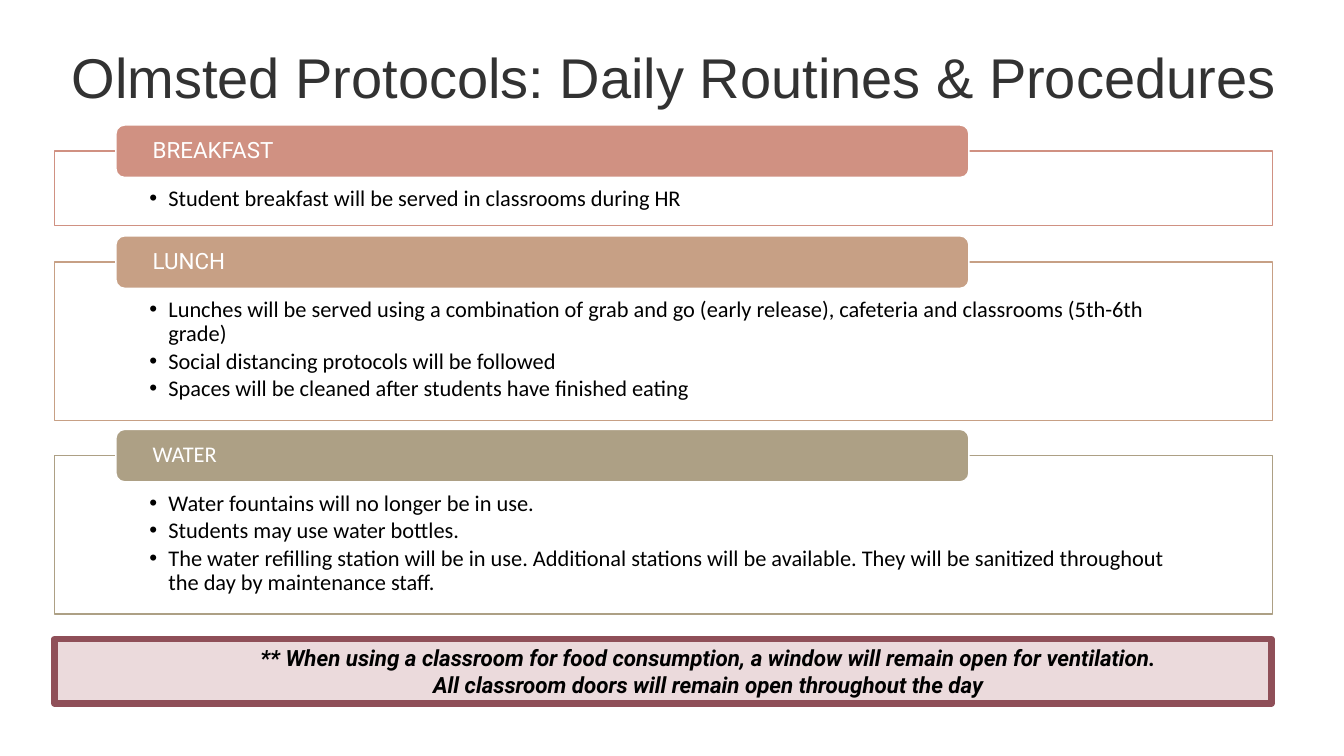
from lxml import etree
from pptx import Presentation
from pptx.dml.color import RGBColor
from pptx.enum.shapes import MSO_SHAPE
from pptx.enum.text import MSO_ANCHOR, MSO_AUTO_SIZE, PP_ALIGN
from pptx.oxml.ns import qn
from pptx.util import Inches, Pt

RECT, ROUNDED = MSO_SHAPE.RECTANGLE, MSO_SHAPE.ROUNDED_RECTANGLE
TOP, MIDDLE = MSO_ANCHOR.TOP, MSO_ANCHOR.MIDDLE
LEFT, CENTER = PP_ALIGN.LEFT, PP_ALIGN.CENTER
NO_AUTOFIT = MSO_AUTO_SIZE.NONE
TITLE_ONLY = 5

SECTIONS = [
    ("BREAKFAST", "Roboto", "D09182", 1.5, 0.74, [
        "Student breakfast will be served in classrooms during HR"]),
    ("LUNCH", "Roboto", "C7A085", 2.6, 1.57, [
        "Lunches will be served using a combination of grab and go "
        "(early release), cafeteria and classrooms (5th-6th grade)",
        "Social distancing protocols will be followed",
        "Spaces will be cleaned after students have finished eating"]),
    ("WATER", "Calibri", "ADA085", 4.52, 1.57, [
        "Water fountains will no longer be in use.",
        "Students may use water bottles.",
        "The water refilling station will be in use. Additional stations will be "
        "available. They will be sanitized throughout the day by maintenance staff."]),
]
NOTICE = [
    "** When using a classroom for food consumption, a window will remain open for ventilation.",
    "All classroom doors will remain open throughout the day",
]


def rgb(value):
    """Turn a hex string into a colour."""
    return RGBColor.from_string(value)


def add_bullet(p):
    """Give a paragraph a hanging round bullet."""
    pPr = p._p.get_or_add_pPr()
    pPr.set("marL", str(Inches(0.19)))
    pPr.set("indent", str(Inches(-0.19)))
    etree.SubElement(pPr, qn("a:buFont")).set("typeface", "Arial")
    etree.SubElement(pPr, qn("a:buChar")).set("char", "•")


def write(s, lines, font="Calibri", size=16, color="000000", bold=False, italic=False,
          align=LEFT, anchor=TOP, margins=(0.1, 0.05, 0.1, 0.05), spacing=1.0,
          after=0, bullets=False):
    """Write paragraphs into a shape with one format."""
    tf = s.text_frame
    tf.word_wrap = True
    tf.auto_size = NO_AUTOFIT
    tf.vertical_anchor = anchor
    (tf.margin_left, tf.margin_top,
     tf.margin_right, tf.margin_bottom) = map(Inches, margins)
    for i, line in enumerate(lines):
        p = tf.add_paragraph() if i else tf.paragraphs[0]
        p.alignment = align
        p.line_spacing = spacing
        p.space_after = Pt(after)
        if bullets:
            add_bullet(p)
        r = p.add_run()
        r.text = line
        r.font.name, r.font.size = font, Pt(size)
        r.font.bold, r.font.italic = bold, italic
        r.font.color.rgb = rgb(color)


def add_box(slide, kind, x, y, w, h, fill, line, width=1):
    """Add a filled and outlined shape."""
    s = slide.shapes.add_shape(kind, Inches(x), Inches(y), Inches(w), Inches(h))
    s.shadow.inherit = False
    s.fill.solid()
    s.fill.fore_color.rgb = rgb(fill)
    s.line.color.rgb = rgb(line)
    s.line.width = Pt(width)
    return s


def add_title(slide, text):
    """Place and format the slide title."""
    s = slide.shapes.title
    s.left, s.top, s.width, s.height = map(Inches, (0.22, 0.14, 12.92, 1.23))
    write(s, [text], font="Arial", size=40, color="323232", align=CENTER, anchor=MIDDLE)


def add_section(slide, heading, font, color, top, height, items):
    """Add a bulleted frame with its heading tab over the top edge."""
    frame = add_box(slide, RECT, 0.54, top, 12.08, height, "FFFFFF", color)
    write(frame, items, margins=(0.94, 0.36, 0.94, 0.12), spacing=0.9, after=2.4,
          bullets=True)
    tab = add_box(slide, ROUNDED, 1.15, top - 0.26, 8.46, 0.52, color, "FFFFFF")
    write(tab, [heading], font=font, color="FFFFFF", anchor=MIDDLE,
          margins=(0.34, 0, 0.34, 0), spacing=0.9)


def add_notice(slide, lines):
    """Add the framed notice at the bottom."""
    s = add_box(slide, RECT, 0.54, 6.34, 12.07, 0.64, "EBDADC", "8F4F58", 4.5)
    write(s, lines, font="Roboto", bold=True, italic=True, align=CENTER,
          anchor=MIDDLE, margins=(1.0, 0.05, 0.1, 0.05))


def main():
    """Build the slide and save it."""
    prs = Presentation()
    prs.slide_width, prs.slide_height = Inches(13.33), Inches(7.5)
    slide = prs.slides.add_slide(prs.slide_layouts[TITLE_ONLY])
    add_title(slide, "Olmsted Protocols: Daily Routines & Procedures")
    for section in SECTIONS:
        add_section(slide, *section)
    add_notice(slide, NOTICE)
    prs.save("out.pptx")


if __name__ == "__main__":
    main()
